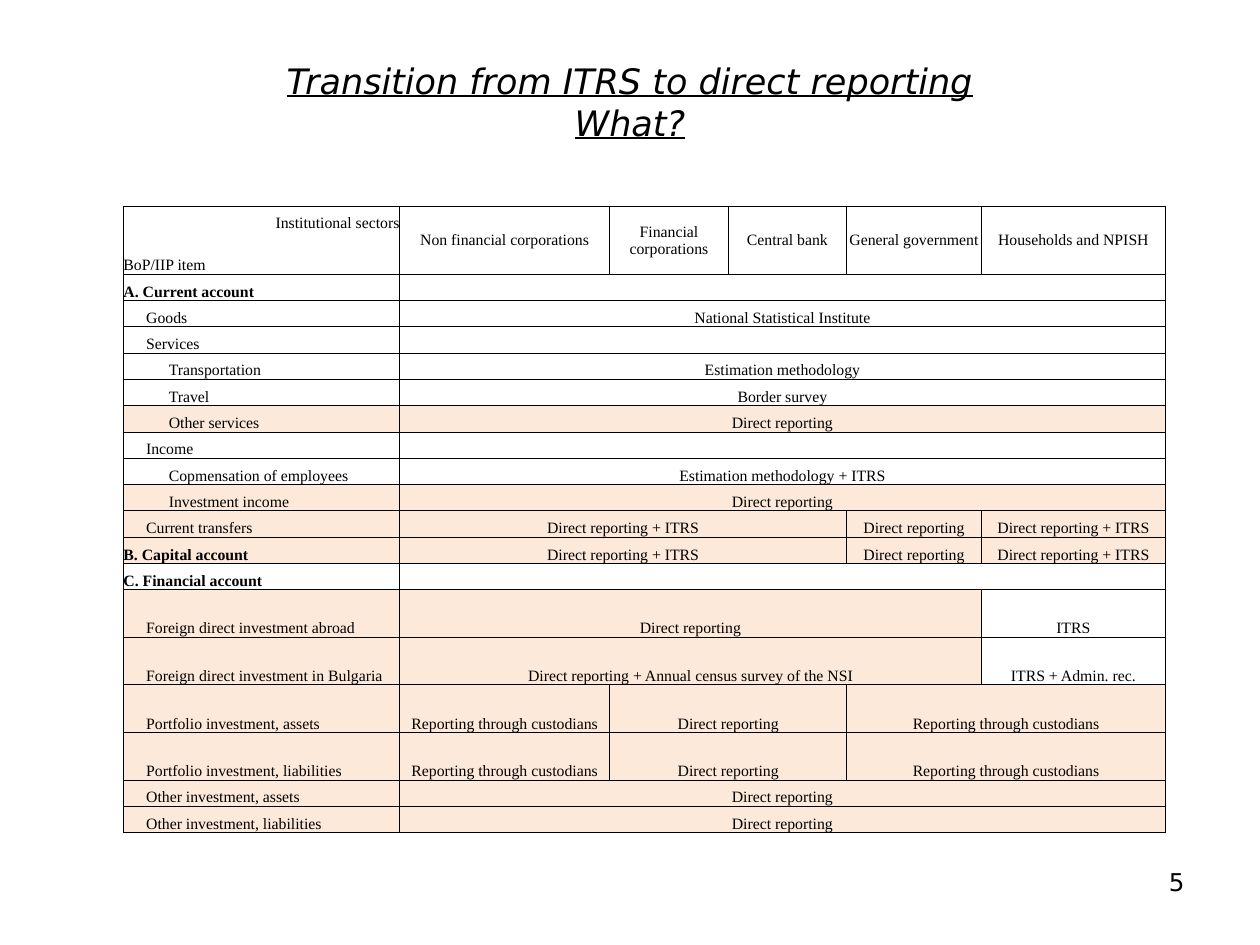
import lxml.etree
import pptx
import pptx.dml.color
import pptx.enum.text
import pptx.oxml.ns
import pptx.util

Inches = pptx.util.Inches
Pt = pptx.util.Pt
ALIGN = pptx.enum.text.PP_ALIGN
ANCHOR = pptx.enum.text.MSO_ANCHOR
qn = pptx.oxml.ns.qn

BLACK = pptx.dml.color.RGBColor(0x00, 0x00, 0x00)
PEACH = pptx.dml.color.RGBColor(0xFD, 0xE9, 0xD9)
SANS = "DejaVu Sans"
SERIF = "Times New Roman"


def add_span(para, text, font, size, bold=False):
    span = para.add_run()
    span.text = text
    span.font.name = font
    span.font.size = Pt(size)
    span.font.bold = bold
    span.font.color.rgb = BLACK
    return span


def format_cell(cell, text, sides, align=ALIGN.CENTER, anchor=ANCHOR.BOTTOM,
                indent=0, bold=False, shaded=False):
    cell.margin_left = Inches(indent)
    cell.margin_right = cell.margin_top = cell.margin_bottom = 0
    cell.vertical_anchor = anchor
    if shaded:
        cell.fill.solid()
        cell.fill.fore_color.rgb = PEACH
    else:
        cell.fill.background()

    para = cell.text_frame.paragraphs[0]
    para.alignment = align
    if text:
        add_span(para, text, SERIF, 9, bold)
    else:
        # Keep empty cells from stretching their row
        lxml.etree.SubElement(para._p, qn("a:endParaRPr"), sz="900")

    # Borders come before the fill in the cell properties
    properties = cell._tc.get_or_add_tcPr()
    for position, side in enumerate("LRTB"):
        line = lxml.etree.Element(qn("a:ln" + side), w=str(Pt(0.5)))
        if side in sides:
            paint = lxml.etree.SubElement(line, qn("a:solidFill"))
            lxml.etree.SubElement(paint, qn("a:srgbClr"), val=str(BLACK))
        else:
            lxml.etree.SubElement(line, qn("a:noFill"))
        properties.insert(position, line)


deck = pptx.Presentation()
deck.slide_width, deck.slide_height = Inches(10), Inches(7.5)
page = deck.slides.add_slide(deck.slide_layouts[5])

# Title
title = page.shapes.title
title.left, title.top = Inches(0.5), Inches(0.3)
title.width, title.height = Inches(9), Inches(1.01)
title.text_frame.vertical_anchor = ANCHOR.MIDDLE
title.text_frame.auto_size = pptx.enum.text.MSO_AUTO_SIZE.NONE
para = title.text_frame.paragraphs[0]
para.alignment = ALIGN.CENTER
for number, text in enumerate(["Transition from ITRS to direct reporting", "What?"]):
    if number:
        para.add_line_break()
    span = add_span(para, text, SANS, 20)
    span.font.italic = True
    span.font.underline = True

# Table contents: level, item, then (reporting source, columns spanned)
sectors = ["Non financial corporations", "Financial corporations", "Central bank",
           "General government", "Households and NPISH"]
direct = [("Direct reporting", 5)]
mixed = [("Direct reporting + ITRS", 3), ("Direct reporting", 1),
         ("Direct reporting + ITRS", 1)]
custodians = [("Reporting through custodians", 1), ("Direct reporting", 2),
              ("Reporting through custodians", 2)]
items = [
    (0, "A. Current account", [("", 5)]),
    (1, "Goods", [("National Statistical Institute", 5)]),
    (1, "Services", [("", 5)]),
    (2, "Transportation", [("Estimation methodology", 5)]),
    (2, "Travel", [("Border survey", 5)]),
    (2, "Other services", direct),
    (1, "Income", [("", 5)]),
    (2, "Copmensation of employees", [("Estimation methodology + ITRS", 5)]),
    (2, "Investment income", direct),
    (1, "Current transfers", mixed),
    (0, "B. Capital account", mixed),
    (0, "C. Financial account", [("", 5)]),
    (1, "Foreign direct investment abroad", [("Direct reporting", 4), ("ITRS", 1)]),
    (1, "Foreign direct investment in Bulgaria",
     [("Direct reporting + Annual census survey of the NSI", 4),
      ("ITRS + Admin. rec.", 1)]),
    (1, "Portfolio investment, assets", custodians),
    (1, "Portfolio investment, liabilities", custodians),
    (1, "Other investment, assets", direct),
    (1, "Other investment, liabilities", direct),
]

# Table grid
widths = [2.19, 1.67, 0.94, 0.94, 1.07, 1.46]
heights = [0.26] * 2 + [0.21] * 12 + [0.38] * 4 + [0.21] * 2
frame = page.shapes.add_table(len(heights), len(widths), Inches(0.98), Inches(1.64),
                              Inches(8.27), Inches(4.95))
table = frame.table
table.first_row = table.horz_banding = False
for column, width in zip(table.columns, widths):
    column.width = Inches(width)
scale = 4.95 / sum(heights)
for row, height in zip(table.rows, heights):
    row.height = Inches(height * scale)

# Header rows
format_cell(table.cell(0, 0), "Institutional sectors", "LRT", ALIGN.RIGHT, ANCHOR.MIDDLE)
format_cell(table.cell(1, 0), "BoP/IIP item", "LRB", ALIGN.LEFT)
for column, sector in enumerate(sectors, 1):
    table.cell(0, column).merge(table.cell(1, column))
    format_cell(table.cell(0, column), sector, "LRTB", anchor=ANCHOR.MIDDLE)
    format_cell(table.cell(1, column), "", "LRTB")

# Item rows: every kind of reporting is shaded
for row, (level, item, sources) in enumerate(items, 2):
    format_cell(table.cell(row, 0), item, "LRTB", ALIGN.LEFT, indent=0.18 * level,
                bold=level == 0,
                shaded=any("eporting" in source for source, _ in sources))
    first = 1
    for source, count in sources:
        last = first + count - 1
        if source and count > 1:
            table.cell(row, first).merge(table.cell(row, last))
        for column in range(first, last + 1):
            sides = "TB"
            if source or column == first:
                sides += "L"
            if source or column == last:
                sides += "R"
            format_cell(table.cell(row, column), source if column == first else "",
                        sides, shaded="eporting" in source)
        first = last + 1

# Page number
box = page.shapes.add_textbox(Inches(7.17), Inches(6.83), Inches(2.33), Inches(0.52))
box.text_frame.word_wrap = True
para = box.text_frame.paragraphs[0]
para.alignment = ALIGN.RIGHT
add_span(para, "5", SANS, 14)

deck.save("out.pptx")
